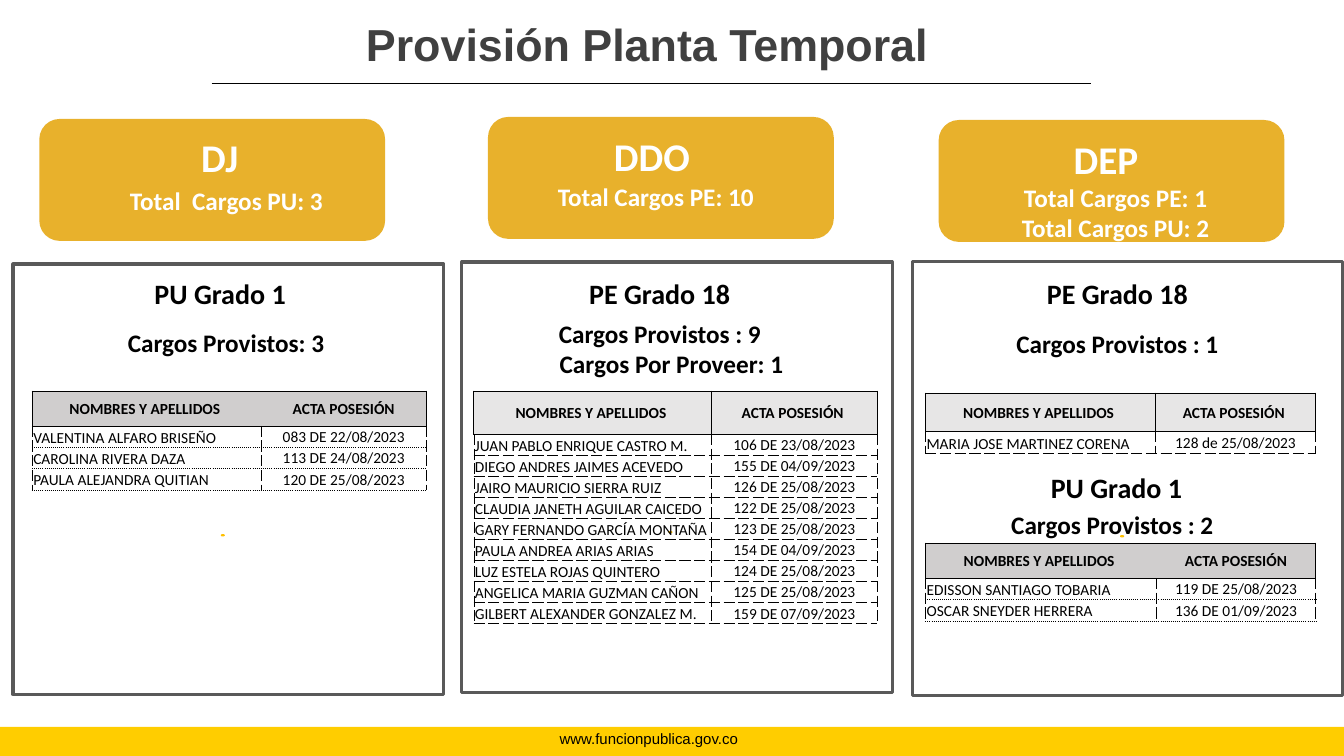
from dataclasses import dataclass

from lxml.etree import SubElement
from pptx import Presentation
from pptx.dml.color import RGBColor
from pptx.enum.shapes import MSO_CONNECTOR, MSO_SHAPE
from pptx.enum.text import MSO_ANCHOR, PP_ALIGN
from pptx.oxml.ns import qn
from pptx.util import Inches, Pt


@dataclass(frozen=True)
class Theme:
    """Colours, fonts and type sizes of the slide."""
    black: str = "000000"
    white: str = "FFFFFF"
    title_grey: str = "404040"
    frame_grey: str = "595959"
    warm_grey: str = "D0CECE"
    light_grey: str = "E7E6E6"
    yellow: str = "FFCD00"
    gold: str = "E8B12C"
    amber: str = "FFC000"
    heading_font: str = "Arial"
    body_font: str = "Calibri"
    title: float = 32
    unit: float = 28
    grade: float = 20
    count: float = 18
    cell: float = 11
    footer: float = 10.7


class SlideBuilder:
    """Holds the theme and the current slide, and draws each kind of element."""

    def __init__(self, theme, page):
        self.theme = theme
        self.page = page

    def shape(self, kind, area, fill=None, line=None):
        """Draw a preset shape."""
        shape = self.page.shapes.add_shape(kind, *map(Inches, area))
        shape.shadow.inherit = False
        if fill:
            shape.fill.solid()
            shape.fill.fore_color.rgb = RGBColor.from_string(fill)
        else:
            shape.fill.background()
        if line:
            shape.line.color.rgb = RGBColor.from_string(line)
            shape.line.width = Pt(2.25)
        else:
            shape.line.fill.background()
        return shape

    def rule(self, left, right, top):
        """Draw a thin horizontal line."""
        rule = self.page.shapes.add_connector(
            MSO_CONNECTOR.STRAIGHT, Inches(left), Inches(top), Inches(right), Inches(top))
        rule.line.color.rgb = RGBColor.from_string(self.theme.black)
        rule.line.width = Pt(1)
        SubElement(rule._element.spPr, qn("a:effectLst"))

    def add_span(self, para, words, size, color, bold=True, font=None, align=PP_ALIGN.CENTER):
        """Add one formatted run to a paragraph."""
        para.alignment = align
        span = para.add_run()
        span.text = words
        span.font.name = font or self.theme.body_font
        span.font.size = Pt(size)
        span.font.bold = bold
        span.font.color.rgb = RGBColor.from_string(color)

    def text(self, area, lines, size, color, middle=False, inset=0.13, indents=(), **style):
        """Draw a text box with one paragraph for each line."""
        box = self.page.shapes.add_textbox(*map(Inches, area))
        frame = box.text_frame
        frame.word_wrap = True
        frame.vertical_anchor = MSO_ANCHOR.MIDDLE if middle else MSO_ANCHOR.TOP
        frame.margin_left = frame.margin_right = Inches(inset)
        frame.margin_top = frame.margin_bottom = Inches(inset)
        for index, words in enumerate(lines):
            para = frame.paragraphs[0] if index == 0 else frame.add_paragraph()
            self.add_span(para, words, size, color, **style)
        for para, indent in zip(frame.paragraphs, indents):
            para._p.get_or_add_pPr().set("marL", str(Inches(indent)))

    def borders(self, cell, edges):
        """Set the borders of a cell from pairs of width and dash."""
        properties = cell._tc.get_or_add_tcPr()
        for side in "LRTB":
            width, dash = edges[side]
            line = SubElement(properties, qn(f"a:ln{side}"), w=str(Pt(width)))
            if not width:
                SubElement(line, qn("a:noFill"))
                continue
            fill = SubElement(line, qn("a:solidFill"))
            SubElement(fill, qn("a:srgbClr"), val=self.theme.black)
            SubElement(line, qn("a:prstDash"), val=dash)

    def table(self, area, name_width, head_height, people, warm=False):
        """Draw a table of names and dates of appointment."""
        theme = self.theme
        left, top, width, height = area
        rows = [("NOMBRES Y APELLIDOS ", "ACTA POSESIÓN" if warm else "ACTA POSESIÓN "), *people]
        table = self.page.shapes.add_table(len(rows), 2, *map(Inches, area)).table
        table.first_row = table.horz_banding = False
        table.columns[0].width = Inches(name_width)
        table.columns[1].width = Inches(width - name_width)
        solid, dashed = (1, "solid"), (0.5, "dash")
        inner = (0, "solid") if warm else solid
        across = (0.5, "dot") if warm else dashed
        for r, row in enumerate(rows):
            head = r == 0
            table.rows[r].height = Inches(head_height if head else (height - head_height) / len(people))
            for c, words in enumerate(row):
                cell = table.cell(r, c)
                if head:
                    edges = {"L": inner if c else solid, "R": solid if c else inner,
                             "T": solid, "B": solid}
                    fill = theme.warm_grey if warm else theme.light_grey
                else:
                    edges = {"L": dashed, "R": dashed, "T": solid if r == 1 else across, "B": across}
                    fill = theme.white if warm else None
                self.borders(cell, edges)
                if fill:
                    cell.fill.solid()
                    cell.fill.fore_color.rgb = RGBColor.from_string(fill)
                else:
                    cell.fill.background()
                name = not head and c == 0
                cell.margin_left = cell.margin_right = cell.margin_top = Inches(0.01)
                cell.margin_bottom = 0
                cell.vertical_anchor = MSO_ANCHOR.BOTTOM if name else MSO_ANCHOR.MIDDLE
                self.add_span(cell.text_frame.paragraphs[0], words, theme.cell, theme.black,
                              bold=head, align=PP_ALIGN.LEFT if name else PP_ALIGN.CENTER)

    def panel(self, left, button_top, frame_top, frame_height, dot):
        """Draw a gold button above an outlined frame with a small dot."""
        theme = self.theme
        self.shape(MSO_SHAPE.ROUNDED_RECTANGLE, (left + 0.26, button_top, 3.43, 1.21), theme.gold)
        self.shape(MSO_SHAPE.RECTANGLE, (left, frame_top, 4.27, frame_height), line=theme.frame_grey)
        mark = self.shape(MSO_SHAPE.ROUNDED_RECTANGLE, (*dot, 0.04, 0.02), theme.amber)
        mark.adjustments[0] = 0.5


def main():
    """Build the slide and save it."""
    deck = Presentation()
    deck.slide_width, deck.slide_height = Inches(13.33), Inches(7.5)
    theme = Theme()
    slide = SlideBuilder(theme, deck.slides.add_slide(deck.slide_layouts[6]))

    slide.shape(MSO_SHAPE.RECTANGLE, (0, 7.21, 13.33, 0.29), theme.yellow)
    slide.text((4.84, 7.19, 3.19, 0.28), ["www.funcionpublica.gov.co"], theme.footer, theme.black,
               middle=True, inset=0.05, bold=False, font=theme.heading_font)
    slide.rule(2.1, 10.82, 0.83)
    slide.text((1.62, 0.11, 9.6, 0.64), ["Provisión Planta Temporal"], theme.title,
               theme.title_grey, middle=True, inset=0.05, font=theme.heading_font)

    slide.panel(4.58, 1.16, 2.6, 4.27, (6.63, 5.27))
    slide.panel(0.13, 1.18, 2.62, 4.27, (2.19, 5.3))
    slide.panel(9.05, 1.19, 2.59, 4.31, (11.11, 5.31))

    for area, unit in (((1.31, 1.19, 1.74, 0.63), "DJ"), ((5.51, 1.18, 1.91, 0.64), "DDO"),
                       ((10.1, 1.21, 1.74, 0.64), "DEP")):
        slide.text(area, [unit], theme.unit, theme.white)
    for area, totals in (((0.83, 1.73, 2.83, 0.51), ["Total  Cargos PU: 3"]),
                         ((5.09, 1.69, 2.83, 0.51), ["Total Cargos PE: 10"]),
                         ((9.65, 1.85, 2.83, 0.51), ["Total Cargos PE: 1", "Total Cargos PU: 2"])):
        slide.text(area, totals, theme.count, theme.white, middle=True)
    for area, grade in (((1.24, 2.61, 1.95, 0.44), "PU Grado 1 "),
                        ((5.56, 2.61, 2.03, 0.51), "PE Grado 18 "),
                        ((10.1, 2.61, 2.03, 0.51), "PE Grado 18 "),
                        ((10.13, 4.54, 1.95, 0.51), "PU Grado 1 ")):
        slide.text(area, [grade], theme.grade, theme.black)
    for area, counts in (((0.8, 3.14, 2.94, 0.51), ["Cargos Provistos: 3 "]),
                         ((5.01, 3.18, 3.07, 0.56), ["Cargos Provistos : 9", "Cargos Por Proveer: 1"]),
                         ((9.64, 3.2, 2.94, 0.41), ["Cargos Provistos : 1 "]),
                         ((9.59, 4.92, 2.94, 0.56), ["Cargos Provistos : 2 "])):
        slide.text(area, counts, theme.count, theme.black, middle=True, indents=(0, 0.23))

    slide.table((0.32, 3.88, 3.91, 0.98), 2.27, 0.35, [
        ("VALENTINA ALFARO BRISEÑO", "083 DE 22/08/2023"),
        ("CAROLINA RIVERA DAZA", "113 DE 24/08/2023"),
        ("PAULA ALEJANDRA QUITIAN", "120 DE 25/08/2023")], warm=True)
    slide.table((4.7, 3.88, 4, 2.31), 2.36, 0.43, [
        ("JUAN PABLO ENRIQUE CASTRO M.", "106 DE 23/08/2023"),
        ("DIEGO ANDRES JAIMES ACEVEDO", "155 DE 04/09/2023"),
        ("JAIRO MAURICIO SIERRA RUIZ", "126 DE 25/08/2023"),
        ("CLAUDIA JANETH AGUILAR CAICEDO", "122 DE 25/08/2023"),
        ("GARY FERNANDO GARCÍA MONTAÑA", "123 DE 25/08/2023"),
        ("PAULA ANDREA ARIAS ARIAS", "154 DE 04/09/2023"),
        ("LUZ ESTELA ROJAS QUINTERO", "124 DE 25/08/2023"),
        ("ANGELICA MARIA GUZMAN CAÑON", "125 DE 25/08/2023"),
        ("GILBERT ALEXANDER GONZALEZ M.", "159 DE 07/09/2023")])
    slide.table((9.18, 3.9, 3.87, 0.6), 2.28, 0.38, [
        ("MARIA JOSE MARTINEZ CORENA", "128 de 25/08/2023")])
    slide.table((9.18, 5.39, 3.87, 0.77), 2.29, 0.35, [
        ("EDISSON SANTIAGO TOBARIA", "119 DE 25/08/2023"),
        ("OSCAR SNEYDER HERRERA", "136 DE 01/09/2023")], warm=True)

    deck.save("out.pptx")


if __name__ == "__main__":
    main()
